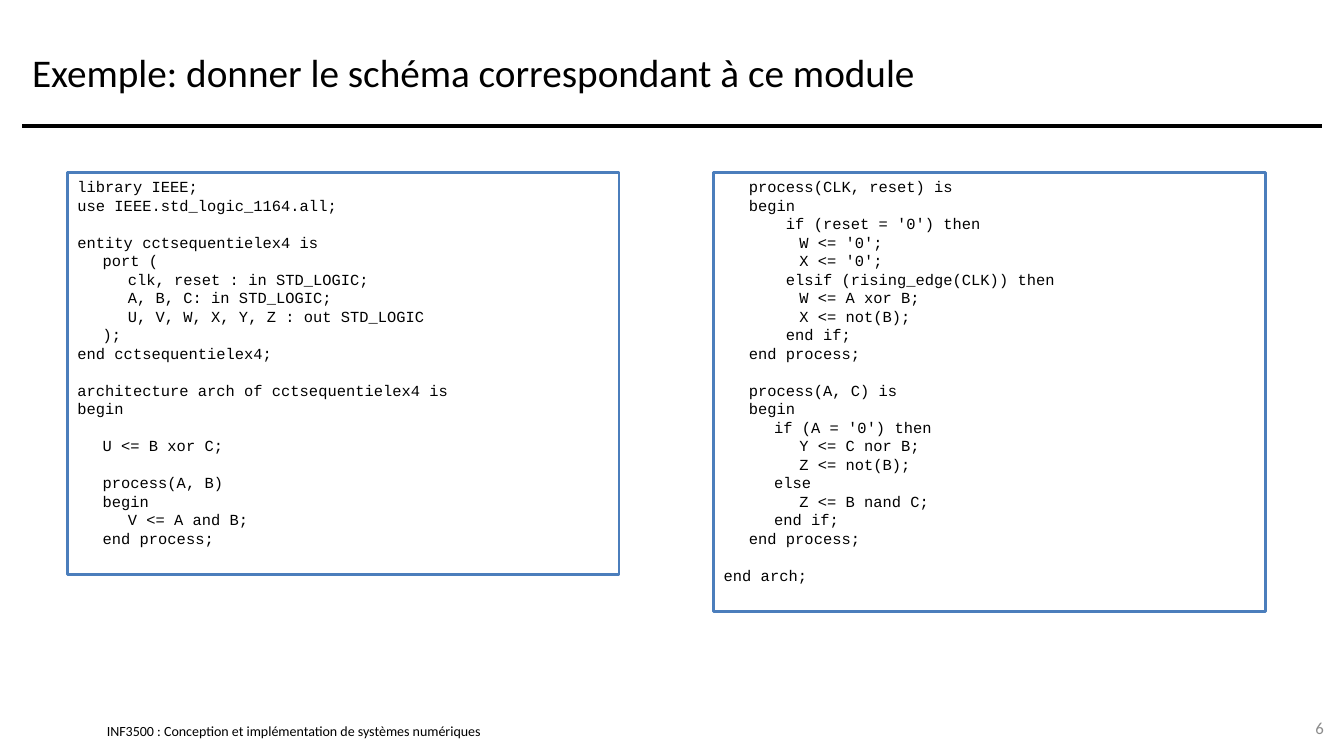
from lxml.etree import SubElement
from pptx import Presentation
from pptx.dml.color import RGBColor
from pptx.enum.shapes import MSO_CONNECTOR, MSO_SHAPE
from pptx.enum.text import MSO_ANCHOR, PP_ALIGN
from pptx.oxml.ns import qn
from pptx.util import Inches, Pt


def color(value):
    return RGBColor.from_string(value)


def format_runs(paragraph, size, font_name, font_color):
    for run in paragraph.runs:
        run.font.size = Pt(size)
        run.font.name = font_name
        run.font.color.rgb = color(font_color)


ENTITY_CODE = """library IEEE;
use IEEE.std_logic_1164.all;

entity cctsequentielex4 is
\tport (
\t\tclk, reset : in STD_LOGIC;
\t\tA, B, C: in STD_LOGIC;
\t\tU, V, W, X, Y, Z : out STD_LOGIC
\t);
end cctsequentielex4;

architecture arch of cctsequentielex4 is
begin

\tU <= B xor C;

\tprocess(A, B)
\tbegin
\t\tV <= A and B;
\tend process;"""

PROCESS_CODE = """\tprocess(CLK, reset) is
\tbegin
\t    if (reset = '0') then
\t\t\tW <= '0';
\t\t\tX <= '0';
\t    elsif (rising_edge(CLK)) then
\t\t\tW <= A xor B;
\t\t\tX <= not(B);
\t    end if;
\tend process;

\tprocess(A, C) is
\tbegin
\t\tif (A = '0') then
\t\t\tY <= C nor B;
\t\t\tZ <= not(B);
\t\telse
\t\t\tZ <= B nand C;
\t\tend if;
\tend process;

end arch;"""

LINE_HEIGHT = Pt(13.2)
TAB_STEP = Inches(0.25)

presentation = Presentation()
presentation.slide_width = Inches(13.33)
presentation.slide_height = Inches(7.5)
slide = presentation.slides.add_slide(presentation.slide_layouts[6])

labels = [
    ("INF3500 : Conception et implémentation de systèmes numériques",
     1.06, 7.17, 5.11, 0.17, 0, 10, "000000", PP_ALIGN.LEFT),
    ("Exemple: donner le schéma correspondant à ce module",
     0.22, 0.17, 12.89, 1.08, 0.1, 28, "000000", PP_ALIGN.LEFT),
    ("6", 12.56, 7.02, 0.67, 0.4, 0.1, 12, "8C8C8C", PP_ALIGN.RIGHT),
]
for text, left, top, width, height, inset, size, font_color, alignment in labels:
    text_box = slide.shapes.add_textbox(
        Inches(left), Inches(top), Inches(width), Inches(height))
    text_frame = text_box.text_frame
    text_frame.word_wrap = True
    text_frame.vertical_anchor = MSO_ANCHOR.MIDDLE
    text_frame.margin_left = text_frame.margin_right = Inches(inset)
    text_frame.margin_top = text_frame.margin_bottom = Inches(inset / 2)
    text_frame.text = text
    paragraph = text_frame.paragraphs[0]
    paragraph.alignment = alignment
    format_runs(paragraph, size, "Calibri", font_color)

title_rule = slide.shapes.add_connector(
    MSO_CONNECTOR.STRAIGHT, Inches(0.22), Inches(1.25), Inches(13.11), Inches(1.25))
title_rule.line.color.rgb = color("000000")
title_rule.line.width = Pt(3)
SubElement(title_rule._element.spPr, qn("a:effectLst"))

for code, left, height in [(ENTITY_CODE, 0.67, 3.99), (PROCESS_CODE, 7.08, 4.36)]:
    code_box = slide.shapes.add_shape(
        MSO_SHAPE.RECTANGLE, Inches(left), Inches(1.71), Inches(5.47), Inches(height))
    code_box.shadow.inherit = False
    code_box.fill.background()
    code_box.line.color.rgb = color("4B7EBC")
    code_box.line.width = Pt(2)
    text_frame = code_box.text_frame
    text_frame.word_wrap = True
    text_frame.vertical_anchor = MSO_ANCHOR.TOP
    text_frame.text = code.replace("\n\n", "\n")
    block_starts = [block.split("\n")[0] for block in code.split("\n\n")[1:]]
    for paragraph in text_frame.paragraphs:
        tab_list = SubElement(paragraph._p.get_or_add_pPr(), qn("a:tabLst"))
        for step in range(1, 6):
            SubElement(tab_list, qn("a:tab"), pos=str(step * TAB_STEP), algn="l")
        paragraph.alignment = PP_ALIGN.JUSTIFY
        paragraph.line_spacing = LINE_HEIGHT
        if paragraph.text in block_starts:
            paragraph.space_before = LINE_HEIGHT
        format_runs(paragraph, 11, "Courier New", "000000")

presentation.save("out.pptx")
